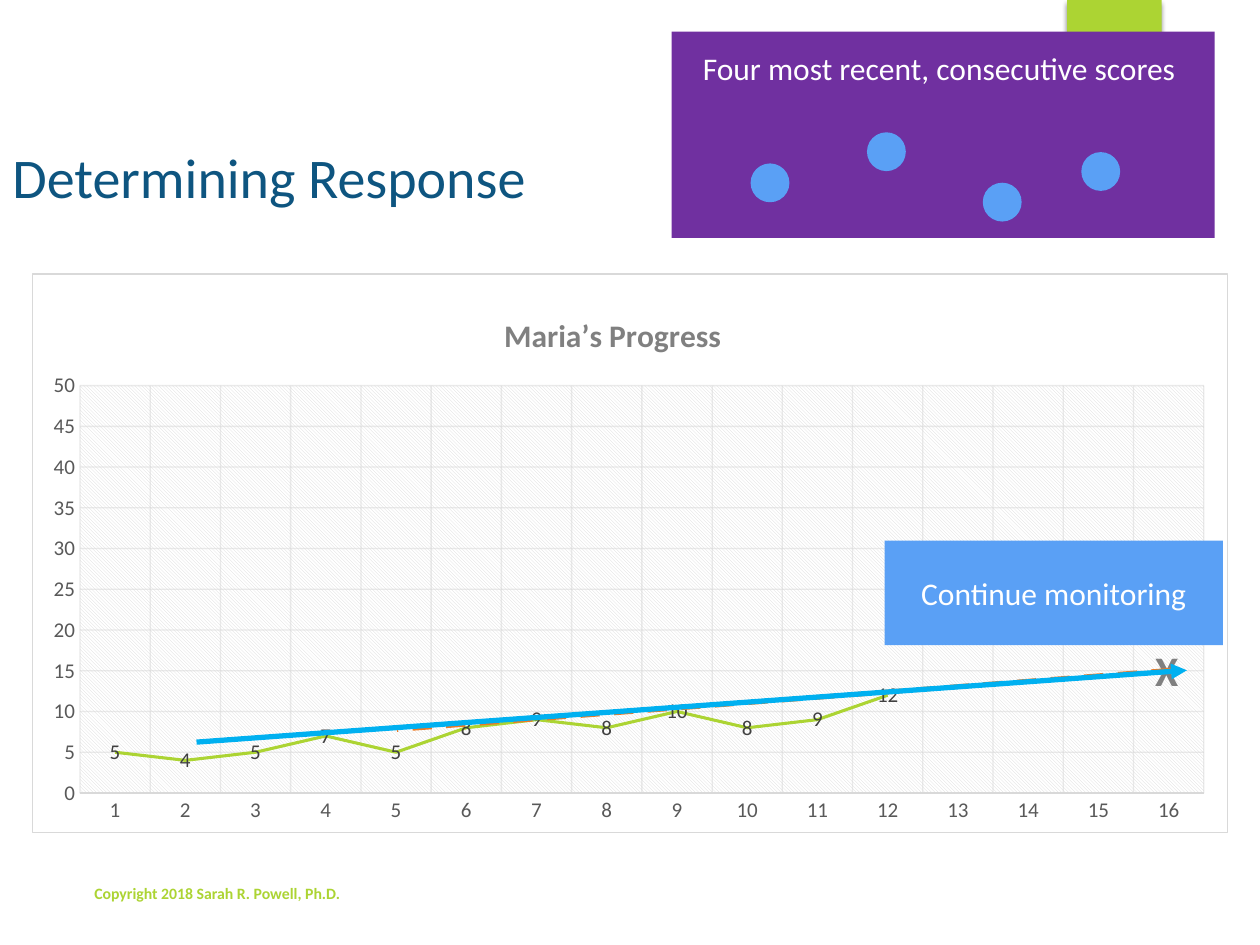
import pptx
import pptx.chart.data
import pptx.dml.color
import pptx.enum.chart
import pptx.enum.dml
import pptx.enum.shapes
import pptx.enum.text
import pptx.oxml
import pptx.oxml.ns
import pptx.util

Pt = pptx.util.Pt
qn = pptx.oxml.ns.qn
MSO = pptx.enum.shapes.MSO_SHAPE
ALIGN = pptx.enum.text.PP_ALIGN
ANCHOR = pptx.enum.text.MSO_ANCHOR
FONT = "Calibri"
NS = pptx.oxml.ns.nsdecls("a", "c")

# Content, with places as left, top, width, height in points
COLORS = {
    "green": "ACD433", "navy": "0E5580", "purple": "7030A0", "blue": "5AA0F5",
    "trend": "00B0F0", "goal": "EF7A24", "gray": "808080", "axis": "595959",
    "label": "404040", "grid": "D9D9D9", "white": "FFFFFF", "black": "000000",
}
SCORES = [5, 4, 5, 7, 5, 8, 9, 8, 10, 8, 9, 12]
WEEKS = 16
CHART_TITLE = "Maria’s Progress"
CHART_BOX = (18, 156.24, 684, 319.68)
TAB = (609.84, 0, 54, 86.4)
PANEL = (383.76, 18, 310.32, 117.9)
DOT_SIZE = 22.2
DOTS = [(428.9, 93.4), (495.4, 75.6), (561.6, 104.4), (617.9, 86.9)]
DECISION = (505.44, 308.88, 193.4, 59.76)
TITLE = ("Determining Response", (0, 72.72, 499.68, 56.16), 32, "navy", False, ANCHOR.MIDDLE)
TARGET = ("X", (653.04, 365.04, 54.72, 36), 24, "gray", True, ANCHOR.TOP)
PANEL_TEXT = ("Four most recent, consecutive scores", (394.56, 24.48, 299.52, 28.8),
              18, "white", False, ANCHOR.TOP)
COPYRIGHT = ("Copyright 2018 Sarah R. Powell, Ph.D.", (46.8, 501.12, 303.84, 18),
             9, "green", True, ANCHOR.BOTTOM)
GOAL_LINE = (668.88, 383.04, 226.8, 416.88)
TREND_LINE = (112.32, 424.08, 678.24, 383.04)


def rgb(name):
    return pptx.dml.color.RGBColor.from_string(COLORS[name])


def set_font(font, size, color, bold=False):
    font.name, font.size, font.bold = FONT, Pt(size), bold
    font.color.rgb = rgb(color)


def add_run(p, text, size, color, bold=False):
    r = p.add_run()
    r.text = text
    set_font(r.font, size, color, bold)


def add_text(shapes, text, box, size, color, bold, anchor, wrap=True):
    tf = shapes.add_textbox(*map(Pt, box)).text_frame
    tf.word_wrap, tf.vertical_anchor = wrap, anchor
    add_run(tf.paragraphs[0], text, size, color, bold)


def add_block(shapes, kind, box, color):
    s = shapes.add_shape(kind, *map(Pt, box))
    s.shadow.inherit = False
    s.fill.solid()
    s.fill.fore_color.rgb = rgb(color)
    s.line.fill.background()
    return s


def add_line(shapes, ends, color, width):
    s = shapes.add_connector(pptx.enum.shapes.MSO_CONNECTOR.STRAIGHT, *map(Pt, ends))
    s.line.color.rgb = rgb(color)
    s.line.width = Pt(width)
    s._element.spPr.append(pptx.oxml.parse_xml(f"<a:effectLst {NS}/>"))
    return s


def set_layout(parent, index, target="", **fractions):
    for old in parent.findall(qn("c:layout")):
        parent.remove(old)
    modes = "".join(f'<c:{k}Mode val="edge"/>' for k in "xy")
    values = "".join(f'<c:{k} val="{v}"/>' for k, v in fractions.items())
    parent.insert(index, pptx.oxml.parse_xml(
        f"<c:layout {NS}><c:manualLayout>{target}{modes}{values}</c:manualLayout></c:layout>"))


def style_axis(axis):
    set_font(axis.tick_labels.font, 12, "axis")
    axis.major_tick_mark = axis.minor_tick_mark = pptx.enum.chart.XL_TICK_MARK.NONE
    axis.has_major_gridlines = True
    line = axis.major_gridlines.format.line
    line.width = Pt(0.75)
    line.color.rgb = rgb("grid")
    for clr in axis.major_gridlines._xAx.find(qn("c:majorGridlines")).iter(qn("a:srgbClr")):
        clr.append(pptx.oxml.parse_xml(f'<a:alpha {NS} val="54000"/>'))


def add_progress_chart(shapes):
    data = pptx.chart.data.CategoryChartData()
    data.categories = [str(n + 1) for n in range(WEEKS)]
    data.add_series("Series 1", SCORES + [None] * (WEEKS - len(SCORES)))
    chart = shapes.add_chart(pptx.enum.chart.XL_CHART_TYPE.LINE,
                             *map(Pt, CHART_BOX), data).chart
    set_font(chart.font, 10, "black")
    chart.has_legend = False
    chart.has_title = True
    add_run(chart.chart_title.text_frame.paragraphs[0], CHART_TITLE, 18, "gray", True)
    chart.chart_title.include_in_layout = False
    set_layout(chart.chart_title._element, 1, x=0.39, y=0.06)

    # Axes
    style_axis(chart.category_axis)
    style_axis(chart.value_axis)
    chart.category_axis.format.line.color.rgb = rgb("grid")
    chart.category_axis.format.line.width = Pt(0.75)
    axis = chart.value_axis
    axis.format.line.fill.background()
    axis.minimum_scale, axis.maximum_scale, axis.major_unit = 0, 50, 5

    # Score line and its labels
    plot = chart.plots[0]
    plot.vary_by_categories = False
    series = plot.series[0]
    series.smooth = False
    series.marker.style = pptx.enum.chart.XL_MARKER_STYLE.NONE
    series.format.line.color.rgb = rgb("green")
    series.format.line.width = Pt(1.75)
    labels = series.data_labels
    labels.show_value = True
    labels.position = pptx.enum.chart.XL_LABEL_POSITION.CENTER
    set_font(labels.font, 12, "label")

    # Hatched plot area and framed chart area
    area = chart._chartSpace.chart.plotArea
    set_layout(area, 0, '<c:layoutTarget val="inner"/>', x=0.04, y=0.2, w=0.94, h=0.73)
    area.append(pptx.oxml.parse_xml(
        f'<c:spPr {NS}><a:pattFill prst="ltDnDiag">'
        f'<a:fgClr><a:srgbClr val="{COLORS["grid"]}"/></a:fgClr>'
        f'<a:bgClr><a:srgbClr val="{COLORS["white"]}"/></a:bgClr>'
        '</a:pattFill><a:ln><a:noFill/></a:ln></c:spPr>'))
    chart._chartSpace.chart.addnext(pptx.oxml.parse_xml(
        f'<c:spPr {NS}><a:solidFill><a:srgbClr val="{COLORS["white"]}"/></a:solidFill>'
        f'<a:ln w="{Pt(0.75)}"><a:solidFill><a:srgbClr val="{COLORS["grid"]}"/>'
        '</a:solidFill></a:ln></c:spPr>'))


def main():
    prs = pptx.Presentation()
    prs.slide_width, prs.slide_height = Pt(720), Pt(540)
    shapes = prs.slides.add_slide(prs.slide_layouts[6]).shapes

    # Green tab with a soft shadow
    tab = add_block(shapes, MSO.RECTANGLE, TAB, "green")
    tab._element.spPr.find(qn("a:effectLst")).append(pptx.oxml.parse_xml(
        f'<a:outerShdw {NS} blurRad="{Pt(3)}" dist="{Pt(2)}" dir="5400000" rotWithShape="0">'
        f'<a:srgbClr val="{COLORS["black"]}"><a:alpha val="45000"/></a:srgbClr></a:outerShdw>'))

    # Title, chart and goal line
    add_text(shapes, *TITLE)
    add_progress_chart(shapes)
    add_text(shapes, *TARGET)
    goal = add_line(shapes, GOAL_LINE, "goal", 2.75)
    goal.line.dash_style = pptx.enum.dml.MSO_LINE.DASH

    # Recent scores panel
    panel = shapes.add_group_shape().shapes
    add_block(panel, MSO.RECTANGLE, PANEL, "purple")
    for left, top in DOTS:
        add_block(panel, MSO.OVAL, (left, top, DOT_SIZE, DOT_SIZE), "blue")
    add_text(panel, *PANEL_TEXT, wrap=False)

    # Decision box
    s = add_block(shapes, MSO.RECTANGLE, DECISION, "blue")
    s.text_frame.vertical_anchor = ANCHOR.MIDDLE
    p = s.text_frame.paragraphs[0]
    p.alignment = ALIGN.CENTER
    add_run(p, "Continue monitoring", 18, "white")

    # Trend arrow and copyright
    trend = add_line(shapes, TREND_LINE, "trend", 3)
    trend.line._get_or_add_ln().append(pptx.oxml.parse_xml(f'<a:tailEnd {NS} type="triangle"/>'))
    add_text(shapes, *COPYRIGHT)

    prs.save("out.pptx")


if __name__ == "__main__":
    main()
